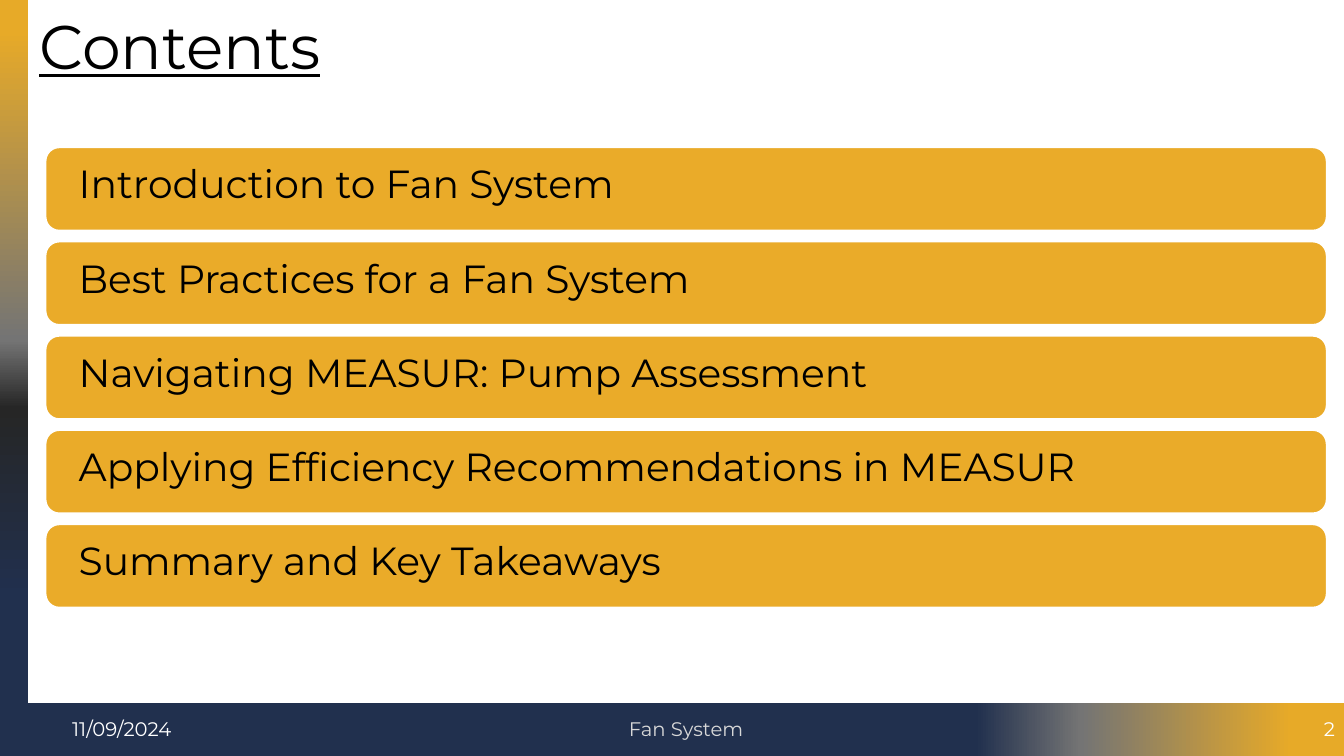
from dataclasses import dataclass

from lxml.etree import SubElement
from pptx import Presentation
from pptx.dml.color import RGBColor
from pptx.enum.shapes import MSO_SHAPE
from pptx.enum.text import MSO_ANCHOR, PP_ALIGN
from pptx.oxml.ns import qn
from pptx.util import Inches, Pt

TITLE = "Contents"
TOPICS = [
    "Introduction to Fan System",
    "Best Practices for a Fan System",
    "Navigating MEASUR: Pump Assessment",
    "Applying Efficiency Recommendations in MEASUR",
    "Summary and Key Takeaways",
]
# text, left, width, alignment, colour name
FOOTERS = [
    ("Fan System", 4.4, 4.81, PP_ALIGN.CENTER, "muted"),
    ("11/09/2024", 0.34, 1.46, PP_ALIGN.RIGHT, "white"),
    ("2", 12.31, 1.03, PP_ALIGN.RIGHT, "white"),
]


@dataclass(frozen=True)
class Theme:
    font: str = "Montserrat"
    title_size: int = 44
    topic_size: int = 28
    footer_size: int = 14
    black: str = "000000"
    white: str = "FFFFFF"
    muted: str = "D8D8D8"
    topic: str = "EAAB29"
    gold: str = "E7AA28"
    gray: str = "747474"
    charcoal: str = "262626"
    navy: str = "21304E"


THEME = Theme()
SLIDE_WIDTH, SLIDE_HEIGHT = 13.33, 7.5
SIDE_WIDTH, FOOTER_HEIGHT = 0.28, 0.53
FOOTER_TOP = SLIDE_HEIGHT - FOOTER_HEIGHT
TOPIC_LEFT, TOPIC_TOP = 0.45, 1.46
TOPIC_WIDTH, TOPIC_HEIGHT, TOPIC_PITCH = 12.71, 0.83, 0.935

SIDE_STOPS = [(0, THEME.gold), (4, THEME.gold), (45, THEME.gray),
              (54, THEME.charcoal), (79, THEME.navy), (100, THEME.navy)]
FOOTER_STOPS = [(0, THEME.gold), (4, THEME.gold), (20, THEME.gray),
                (28, THEME.navy), (79, THEME.navy), (100, THEME.navy)]


def add_block(slide, preset, left, top, width, height):
    block = slide.shapes.add_shape(
        preset, Inches(left), Inches(top), Inches(width), Inches(height))
    block.shadow.inherit = False
    return block


def add_gradient_band(slide, left, top, width, height, stops, angle):
    """Add a rectangle filled with stops; angle is clockwise in degrees."""
    band = add_block(slide, MSO_SHAPE.RECTANGLE, left, top, width, height)
    band.line.fill.background()
    band.fill.gradient()
    gradient = band.fill._xPr.find(qn("a:gradFill"))
    for child in list(gradient):
        gradient.remove(child)
    stop_list = SubElement(gradient, qn("a:gsLst"))
    for percent, color in stops:
        stop = SubElement(stop_list, qn("a:gs"), pos=str(percent * 1000))
        SubElement(stop, qn("a:srgbClr"), val=color)
    SubElement(gradient, qn("a:lin"), ang=str(angle * 60000), scaled="0")


def write_text(shape, text, size, color, align, anchor, spacing=1.0):
    frame = shape.text_frame
    frame.word_wrap = True
    frame.vertical_anchor = anchor
    para = frame.paragraphs[0]
    para.alignment = align
    para.line_spacing = spacing
    span = para.add_run()
    span.text = text
    span.font.name = THEME.font
    span.font.size = Pt(size)
    span.font.color.rgb = RGBColor.from_string(color)
    return span


def add_text_box(slide, left, top, width, height):
    return slide.shapes.add_textbox(
        Inches(left), Inches(top), Inches(width), Inches(height))


def add_topic(slide, row, text):
    bar = add_block(slide, MSO_SHAPE.ROUNDED_RECTANGLE, TOPIC_LEFT,
                    TOPIC_TOP + row * TOPIC_PITCH, TOPIC_WIDTH, TOPIC_HEIGHT)
    bar.adjustments[0] = 0.167
    bar.fill.solid()
    bar.fill.fore_color.rgb = RGBColor.from_string(THEME.topic)
    bar.line.color.rgb = RGBColor.from_string(THEME.white)
    bar.line.width = Pt(1.5)
    write_text(bar, text, THEME.topic_size, THEME.black,
               PP_ALIGN.LEFT, MSO_ANCHOR.MIDDLE, 0.7)
    frame = bar.text_frame
    frame.margin_left = Inches(0.29)
    frame.margin_right = frame.margin_top = frame.margin_bottom = Inches(0.12)


def main():
    deck = Presentation()
    deck.slide_width, deck.slide_height = Inches(SLIDE_WIDTH), Inches(SLIDE_HEIGHT)
    page = deck.slides.add_slide(deck.slide_layouts[6])

    add_gradient_band(page, 0, 0, SIDE_WIDTH, SLIDE_HEIGHT, SIDE_STOPS, 90)
    add_gradient_band(page, SIDE_WIDTH, FOOTER_TOP, SLIDE_WIDTH - SIDE_WIDTH,
                      FOOTER_HEIGHT, FOOTER_STOPS, 180)

    for text, left, width, align, color in FOOTERS:
        box = add_text_box(page, left, FOOTER_TOP + 0.06, width, 0.4)
        write_text(box, text, THEME.footer_size, getattr(THEME, color),
                   align, MSO_ANCHOR.MIDDLE)

    title_box = add_text_box(page, 0.29, 0, 10.08, 0.87)
    title = write_text(title_box, TITLE, THEME.title_size, THEME.black,
                       PP_ALIGN.LEFT, MSO_ANCHOR.BOTTOM, 0.9)
    title.font.underline = True

    for row, topic in enumerate(TOPICS):
        add_topic(page, row, topic)

    deck.save("out.pptx")


if __name__ == "__main__":
    main()
